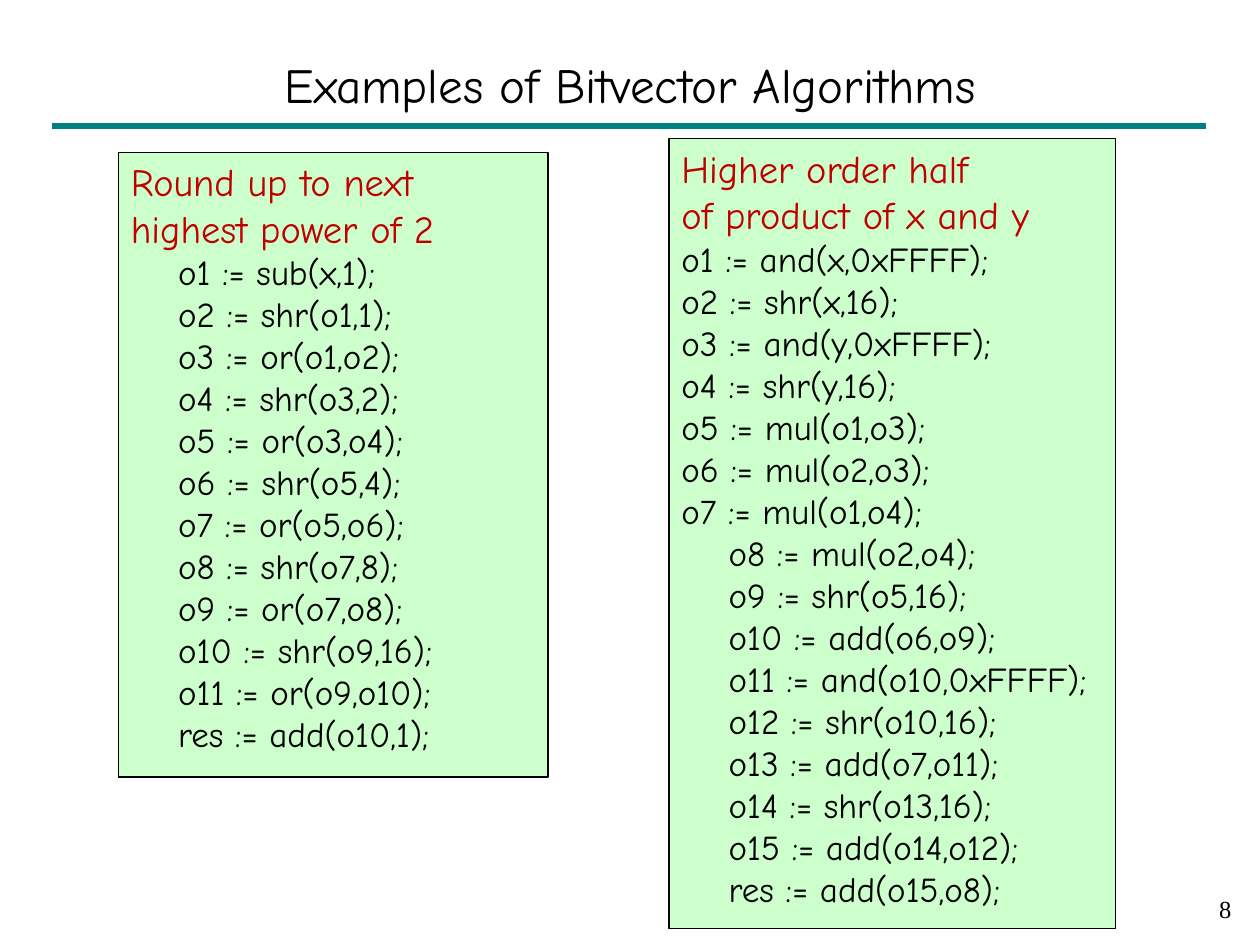
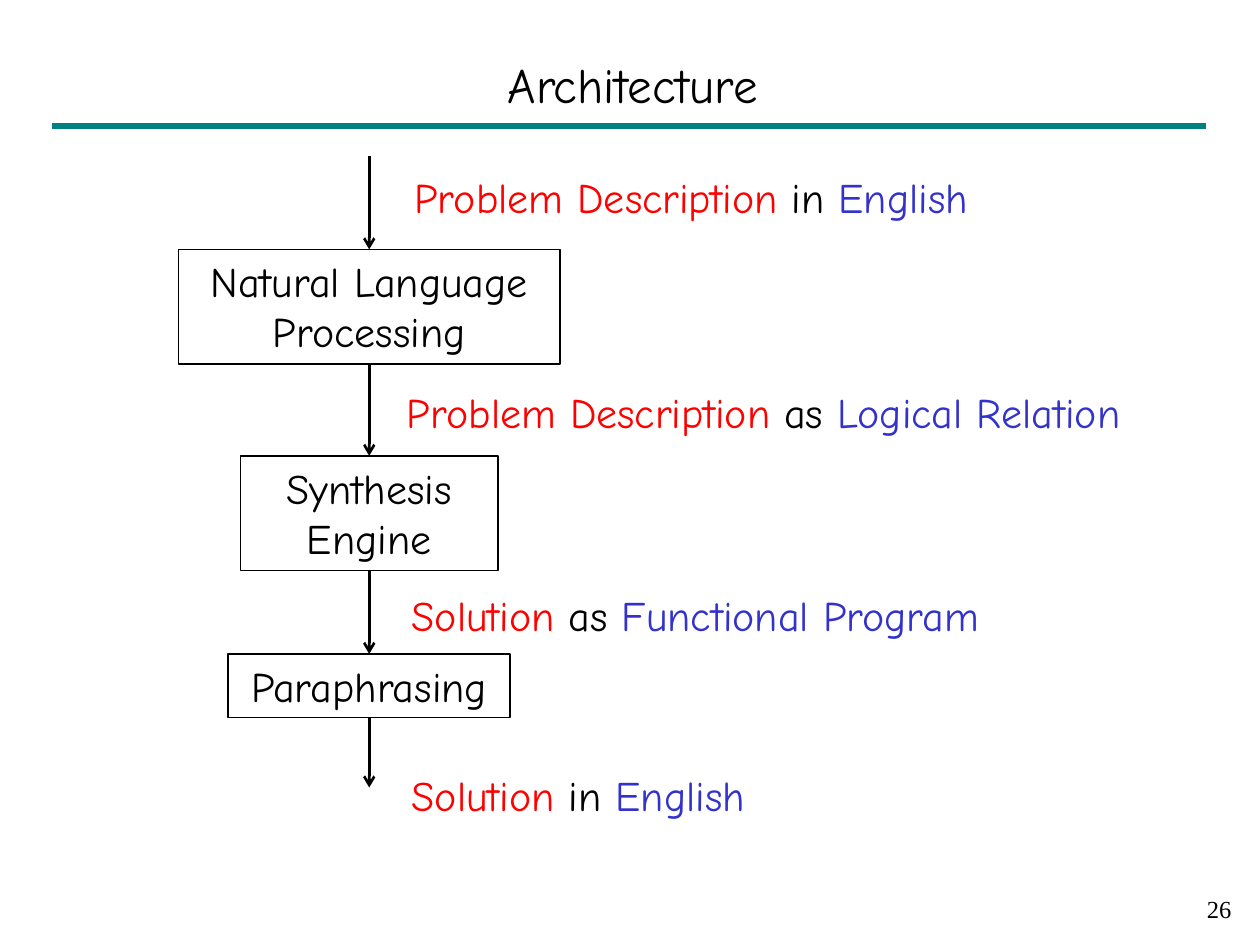
from lxml import etree
from pptx import Presentation
from pptx.dml.color import RGBColor
from pptx.enum.shapes import MSO_CONNECTOR, MSO_SHAPE
from pptx.enum.text import MSO_ANCHOR, PP_ALIGN
from pptx.oxml.ns import qn
from pptx.util import Pt

STRAIGHT = MSO_CONNECTOR.STRAIGHT
RECTANGLE = MSO_SHAPE.RECTANGLE
TOP, MIDDLE = MSO_ANCHOR.TOP, MSO_ANCHOR.MIDDLE
LEFT, CENTER, RIGHT = PP_ALIGN.LEFT, PP_ALIGN.CENTER, PP_ALIGN.RIGHT
TOP_SIDE, BOTTOM_SIDE = 0, 2

BLACK, TEAL, PALE_GREEN = "000000", "008080", "CCFFCC"
DARK_RED, RED, BLUE = "C00000", "FF0000", "3333CC"
BODY_FONT, NUMBER_FONT = "Comic Neue", "Times New Roman"
CODE_INDENT = 27

ROUND_UP_HEADING = ["Round up to next", "highest power of 2"]
ROUND_UP_CODE = [
    "o1 := sub(x,1);", "o2 := shr(o1,1);", "o3 := or(o1,o2);",
    "o4 := shr(o3,2);", "o5 := or(o3,o4);", "o6 := shr(o5,4);",
    "o7 := or(o5,o6);", "o8 := shr(o7,8);", "o9 := or(o7,o8);",
    "o10 := shr(o9,16);", "o11 := or(o9,o10);", "res := add(o10,1);",
]
PRODUCT_HEADING = ["Higher order half", "of product of x and y"]
PRODUCT_CODE = [
    "o1 := and(x,0xFFFF);", "o2 := shr(x,16);", "o3 := and(y,0xFFFF);",
    "o4 := shr(y,16);", "o5 := mul(o1,o3);", "o6 := mul(o2,o3);",
    "o7 := mul(o1,o4);", "o8 := mul(o2,o4);", "o9 := shr(o5,16);",
    "o10 := add(o6,o9);", "o11 := and(o10,0xFFFF);", "o12 := shr(o10,16);",
    "o13 := add(o7,o11);", "o14 := shr(o13,16);", "o15 := add(o14,o12);",
    "res := add(o15,o8);",
]

# Stage boxes: text, top, width, height
STAGES = [
    ("Natural Language Processing", 142.5, 218, 65.5),
    ("Synthesis Engine", 260.5, 147, 65.5),
    ("Paraphrasing", 373.7, 161, 36.4),
]
FLOW_X, FLOW_TOP, FLOW_BOTTOM = 211, 89.3, 450

# Labels beside the arrows: left, top, width, subject, link word, form
LABELS = [
    (229.7, 94.3, 367, "Problem Description", " in ", "English"),
    (225.4, 217.4, 457, "Problem Description", " as ", "Logical Relation"),
    (228.2, 333.4, 369, "Solution", " as ", "Functional Program"),
    (228.2, 436.3, 226, "Solution", " in ", "English"),
]


def rgb(color):
    return RGBColor.from_string(color)


class Deck:
    """Holds the presentation, its style and the page being drawn."""

    def __init__(self):
        self.deck = Presentation()
        self.deck.slide_width, self.deck.slide_height = Pt(720), Pt(540)
        self.page = None

    def add_page(self, title, number, title_left=54, title_width=612):
        self.page = self.deck.slides.add_slide(self.deck.slide_layouts[6])
        self.line((30, 72), (689, 72), TEAL, 4)
        self.text(560.9, 507.6, 149.8, 30, [(number, BLACK)], 14, RIGHT, font=NUMBER_FONT)
        self.text(title_left, 24, title_width, 48, [(title, BLACK)], 28, CENTER, MIDDLE)

    def style(self, para, size, color=None, align=LEFT, font=BODY_FONT):
        para.alignment = align
        para.font.name, para.font.size = font, Pt(size)
        if color:
            para.font.color.rgb = rgb(color)

    def text(self, left, top, width, height, spans, size,
             align=LEFT, anchor=TOP, font=BODY_FONT):
        """Add a one-paragraph text box from (words, colour) spans."""
        box = self.page.shapes.add_textbox(Pt(left), Pt(top), Pt(width), Pt(height))
        frame = box.text_frame
        frame.word_wrap, frame.vertical_anchor = True, anchor
        para = frame.paragraphs[0]
        self.style(para, size, align=align, font=font)
        for words, color in spans:
            span = para.add_run()
            span.text = words
            span.font.color.rgb = rgb(color)

    def box(self, left, top, width, height, line_width, fill=None):
        box = self.page.shapes.add_shape(RECTANGLE, Pt(left), Pt(top), Pt(width), Pt(height))
        box.shadow.inherit = False
        if fill:
            box.fill.solid()
            box.fill.fore_color.rgb = rgb(fill)
        else:
            box.fill.background()
        box.line.color.rgb, box.line.width = rgb(BLACK), Pt(line_width)
        box.text_frame.word_wrap, box.text_frame.vertical_anchor = True, TOP
        return box

    def stage(self, words, top, width, height):
        box = self.box(FLOW_X - width / 2, top, width, height, 1)
        para = box.text_frame.paragraphs[0]
        para.text = words
        self.style(para, 24, BLACK, CENTER)
        return box

    def listing(self, left, top, width, height, heading, code, flush=0):
        """Add a code panel whose first `flush` code lines are not indented."""
        frame = self.box(left, top, width, height, 0.75, PALE_GREEN).text_frame
        for index, words in enumerate(heading + code):
            para = frame.add_paragraph() if index else frame.paragraphs[0]
            para.text = words
            is_heading = index < len(heading)
            self.style(para, 22 if is_heading else 20, DARK_RED if is_heading else BLACK)
            hanging = index < len(heading) + flush
            properties = para._p.get_or_add_pPr()
            properties.set("marL", str(Pt(CODE_INDENT)))
            properties.set("indent", str(Pt(-CODE_INDENT if hanging else 0)))

    def line(self, start, end, color, width):
        line = self.page.shapes.add_connector(STRAIGHT, *map(Pt, start + end))
        line.line.color.rgb, line.line.width = rgb(color), Pt(width)
        etree.SubElement(line._element.spPr, qn("a:effectLst"))
        return line

    def arrow(self, above, below):
        """Point down from one stage to the next; None is the open end of the flow."""
        arrow = self.line((FLOW_X, FLOW_TOP), (FLOW_X, FLOW_BOTTOM), BLACK, 1.5)
        etree.SubElement(arrow.line._get_or_add_ln(), qn("a:tailEnd"), type="arrow")
        if above:
            arrow.begin_connect(above, BOTTOM_SIDE)
        if below:
            arrow.end_connect(below, TOP_SIDE)


def draw_algorithms(deck):
    deck.add_page("Examples of Bitvector Algorithms", "8")
    deck.listing(382.3, 79.2, 255, 451.4, PRODUCT_HEADING, PRODUCT_CODE, flush=7)
    deck.listing(67.7, 87, 245.5, 357, ROUND_UP_HEADING, ROUND_UP_CODE)


def draw_architecture(deck):
    deck.add_page("Architecture", "26", -21, 765)
    stages = [deck.stage(*stage) for stage in STAGES]
    for left, top, width, subject, link, form in LABELS:
        spans = [(subject, RED), (link, BLACK), (form, BLUE)]
        deck.text(left, top, width, 36, spans, 24)
    for above, below in zip([None] + stages, stages + [None]):
        deck.arrow(above, below)


def main():
    deck = Deck()
    draw_algorithms(deck)
    draw_architecture(deck)
    deck.deck.save("out.pptx")


if __name__ == "__main__":
    main()
